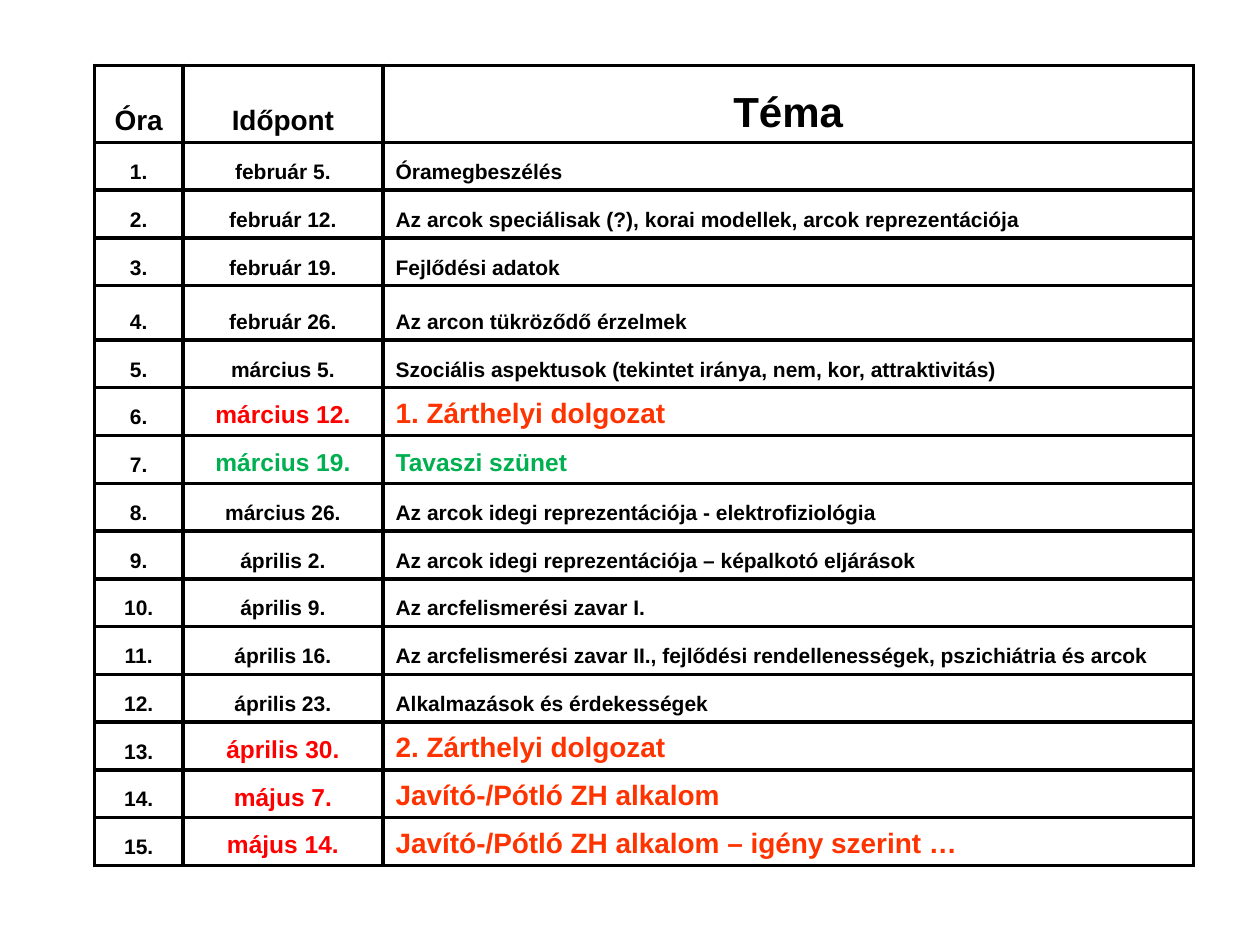
from dataclasses import dataclass

from lxml.etree import SubElement
from pptx import Presentation
from pptx.dml.color import RGBColor as RGB
from pptx.enum.text import MSO_ANCHOR as ANCHOR, PP_ALIGN as ALIGN
from pptx.oxml.ns import qn
from pptx.util import Pt


@dataclass(frozen=True)
class Theme:
    font: str = "Arial"
    black: str = "000000"
    red: str = "FF0000"
    orange: str = "FF3300"
    green: str = "00B050"
    body: int = 12
    accent: int = 14
    head: int = 16
    title: int = 24
    border: float = 2.25
    hanging: int = 27


THEME = Theme()

# Formats of the date and topic columns for each kind of lesson
PLAIN = (dict(), dict())
EXAM = (dict(size=THEME.accent, color=THEME.red),
        dict(size=THEME.head, color=THEME.orange))
BREAK = (dict(size=THEME.accent, color=THEME.green),) * 2

LESSONS = [
    ("február 5.", "Óramegbeszélés", PLAIN),
    ("február 12.", "Az arcok speciálisak (?), korai modellek, arcok reprezentációja", PLAIN),
    ("február 19.", "Fejlődési adatok", PLAIN),
    ("február 26.", "Az arcon tükröződő érzelmek", PLAIN),
    ("március 5.", "Szociális aspektusok (tekintet iránya, nem, kor, attraktivitás)", PLAIN),
    ("március 12.", "1. Zárthelyi dolgozat", EXAM),
    ("március 19.", "Tavaszi szünet", BREAK),
    ("március 26.", "Az arcok idegi reprezentációja - elektrofiziológia", PLAIN),
    ("április 2.", "Az arcok idegi reprezentációja – képalkotó eljárások", PLAIN),
    ("április 9.", "Az arcfelismerési zavar I.", PLAIN),
    ("április 16.", "Az arcfelismerési zavar II., fejlődési rendellenességek, pszichiátria és arcok", PLAIN),
    ("április 23.", "Alkalmazások és érdekességek", PLAIN),
    ("április 30.", "2. Zárthelyi dolgozat", EXAM),
    ("május 7.", "Javító-/Pótló ZH alkalom", EXAM),
    ("május 14.", "Javító-/Pótló ZH alkalom – igény szerint …", EXAM),
]


def write(tf, text, size=THEME.body, color=THEME.black, align=ALIGN.CENTER):
    """Put one bold paragraph with a hanging indent into a text frame."""
    p = tf.paragraphs[0]
    p.alignment = align
    pPr = p._p.get_or_add_pPr()
    pPr.set("marL", str(Pt(THEME.hanging)))
    pPr.set("indent", str(-Pt(THEME.hanging)))
    r = p.add_run()
    r.text = text
    r.font.name, r.font.size, r.font.bold = THEME.font, Pt(size), True
    r.font.color.rgb = RGB.from_string(color)


class Builder:
    def __init__(self, slide, theme):
        self.slide, self.theme = slide, theme

    def border(self, cell):
        tcPr = cell._tc.get_or_add_tcPr()
        for side in ("lnL", "lnR", "lnT", "lnB"):
            ln = SubElement(tcPr, qn(f"a:{side}"), w=str(Pt(self.theme.border)))
            fill = SubElement(ln, qn("a:solidFill"))
            SubElement(fill, qn("a:srgbClr"), val=self.theme.black)

    def table(self, left, top, widths, heights, rows):
        """Each row is a list of (text, format) pairs."""
        table = self.slide.shapes.add_table(
            len(rows), len(widths), Pt(left), Pt(top),
            Pt(sum(widths)), Pt(sum(heights))).table
        table.first_row = table.horz_banding = False
        for column, width in zip(table.columns, widths):
            column.width = Pt(width)
        for row, height, content in zip(table.rows, heights, rows):
            row.height = Pt(height)
            for cell, (text, fmt) in zip(row.cells, content):
                self.border(cell)
                cell.fill.background()
                cell.vertical_anchor = ANCHOR.BOTTOM
                write(cell.text_frame, text, **fmt)


def main():
    prs = Presentation()
    prs.slide_width, prs.slide_height = Pt(720), Pt(540)
    s = Builder(prs.slides.add_slide(prs.slide_layouts[6]), THEME)

    # Header row, then the numbered lessons
    rows = [[("Óra", dict(size=THEME.head)),
             ("Időpont", dict(size=THEME.head)),
             ("Téma", dict(size=THEME.title))]]
    for number, (date, topic, (date_fmt, topic_fmt)) in enumerate(LESSONS, 1):
        rows.append([(f"{number}.", {}), (date, date_fmt),
                     (topic, dict(topic_fmt, align=ALIGN.LEFT))])

    # Equal lesson rows, except the slightly taller fourth
    heights = [44] + [27.3] * len(LESSONS)
    heights[4] = 31
    s.table(54, 37.4, [50.5, 114.4, 463], heights, rows)

    prs.save("out.pptx")


if __name__ == "__main__":
    main()
